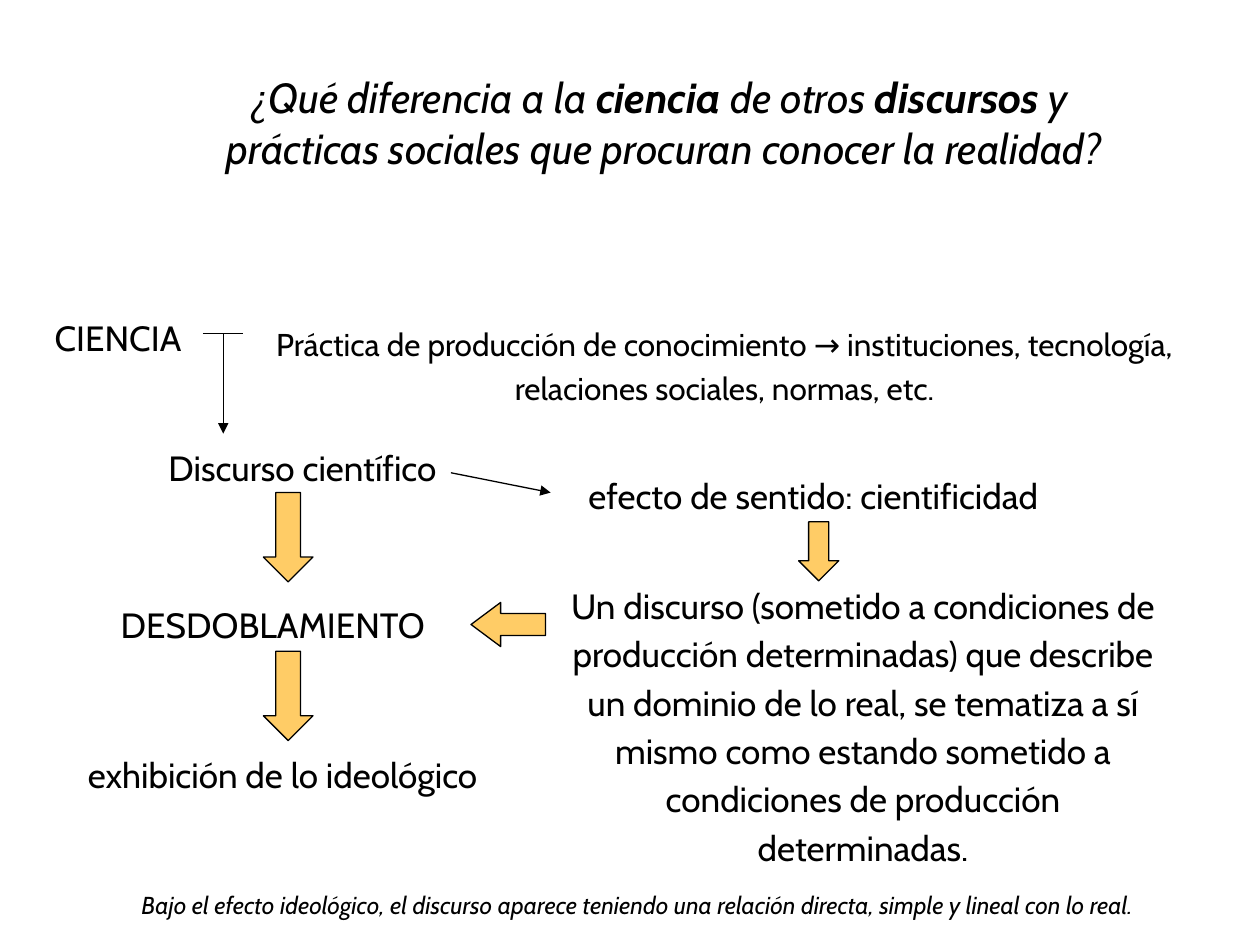
from dataclasses import dataclass

from lxml import etree
from pptx import Presentation
from pptx import util as u
from pptx.dml import color
from pptx.enum import shapes, text
from pptx.oxml import ns

FONT = "Cabin"
INK = "000000"
GOLD = "FFCC66"
LINE_WIDTH = 0.75


@dataclass(frozen=True)
class Phrase:
    wording: str
    bold: bool = False


@dataclass(frozen=True)
class Statement:
    lines: list[list[Phrase]]
    left: float
    top: float
    width: float
    height: float
    size: int = 20
    italic: bool = False
    spacing: float = 1.15


@dataclass(frozen=True)
class Link:
    start: tuple[float, float]
    end: tuple[float, float]
    arrow: bool = True


@dataclass(frozen=True)
class BlockArrow:
    left: float
    top: float
    width: float
    height: float
    head: float = 0.5
    rotation: int = 0


def plain(wording: str) -> list[list[Phrase]]:
    return [[Phrase(wording)]]


QUESTION = [
    [
        Phrase("¿Qué diferencia a la "),
        Phrase("ciencia", bold=True),
        Phrase(" de otros "),
        Phrase("discursos", bold=True),
        Phrase(" y "),
    ],
    [Phrase("prácticas sociales que procuran conocer la realidad?")],
]
SPLITTING = (
    "Un discurso (sometido a condiciones de producción determinadas) que describe "
    "un dominio de lo real, se tematiza a sí mismo como estando sometido a "
    "condiciones de producción determinadas."
)
PRACTICE = (
    "Práctica de producción de conocimiento → instituciones, tecnología, "
    "relaciones sociales, normas, etc."
)
IDEOLOGY = (
    "Bajo el efecto ideológico, el discurso aparece teniendo una relación directa, "
    "simple y lineal con lo real."
)

STATEMENTS = [
    Statement(QUESTION, 3.3, 1.32, 20.19, 3.86, size=24, italic=True, spacing=1.0),
    Statement(plain("CIENCIA"), -0.3, 6.12, 5.36, 1.24),
    Statement(plain(SPLITTING), 11.1, 11.53, 12.6, 6.15),
    Statement(plain("Discurso científico"), -2.9, 8.74, 18, 1.14),
    Statement(plain(PRACTICE), 4.7, 6.32, 19.81, 2.03, size=18),
    Statement(plain("efecto de sentido: cientificidad"), 7.4, 9.32, 18, 1.24),
    Statement(plain("DESDOBLAMIENTO"), -3.5, 11.91, 18, 1.24),
    Statement(plain(IDEOLOGY), 0.3, 17.73, 25.1, 0.94, size=14, italic=True),
    Statement(plain("exhibición de lo ideológico"), -3.3, 14.94, 18, 1.24),
]
LINKS = [
    Link((4.09, 6.73), (4.9, 6.73), arrow=False),
    Link((4.5, 6.73), (4.5, 8.74)),
    Link((9.09, 9.53), (11.1, 9.93)),
]
BLOCK_ARROWS = [
    BlockArrow(16.1, 10.52, 0.81, 1.19),
    BlockArrow(5.31, 9.93, 1, 1.8),
    BlockArrow(9.8, 11.84, 0.89, 1.5, head=0.67, rotation=90),
    BlockArrow(5.31, 13.13, 1, 1.8),
]


def rgb(code: str) -> color.RGBColor:
    return color.RGBColor.from_string(code)


def draw_statement(slide, statement: Statement) -> None:
    box = slide.shapes.add_textbox(
        u.Cm(statement.left), u.Cm(statement.top),
        u.Cm(statement.width), u.Cm(statement.height),
    )
    frame = box.text_frame
    frame.word_wrap = True
    frame.auto_size = text.MSO_AUTO_SIZE.SHAPE_TO_FIT_TEXT
    paragraph = frame.paragraphs[0]
    paragraph.alignment = text.PP_ALIGN.CENTER
    paragraph.line_spacing = statement.spacing
    for index, line in enumerate(statement.lines):
        if index:
            paragraph.add_line_break()
        for phrase in line:
            run = paragraph.add_run()
            run.text = phrase.wording
            run.font.name = FONT
            run.font.size = u.Pt(statement.size)
            run.font.bold = phrase.bold
            run.font.italic = statement.italic
            run.font.color.rgb = rgb(INK)


def draw_link(slide, link: Link) -> None:
    connector = slide.shapes.add_connector(
        shapes.MSO_CONNECTOR.STRAIGHT, *map(u.Cm, link.start + link.end)
    )
    connector.line.color.rgb = rgb(INK)
    connector.line.width = u.Pt(LINE_WIDTH)
    if link.arrow:
        outline = connector.line._get_or_add_ln()
        etree.SubElement(outline, ns.qn("a:tailEnd"), type="triangle")
    etree.SubElement(connector._element.spPr, ns.qn("a:effectLst"))


def draw_block_arrow(slide, arrow: BlockArrow) -> None:
    block = slide.shapes.add_shape(
        shapes.MSO_SHAPE.DOWN_ARROW,
        u.Cm(arrow.left), u.Cm(arrow.top), u.Cm(arrow.width), u.Cm(arrow.height),
    )
    block.adjustments[0] = 0.5
    block.adjustments[1] = arrow.head
    block.rotation = arrow.rotation
    block.shadow.inherit = False
    block.fill.solid()
    block.fill.fore_color.rgb = rgb(GOLD)
    block.line.color.rgb = rgb(INK)
    block.line.width = u.Pt(LINE_WIDTH)


def main() -> None:
    deck = Presentation()
    deck.slide_width = u.Cm(25.4)
    deck.slide_height = u.Cm(19.05)
    slide = deck.slides.add_slide(deck.slide_layouts[6])
    for statement in STATEMENTS:
        draw_statement(slide, statement)
    for link in LINKS:
        draw_link(slide, link)
    for arrow in BLOCK_ARROWS:
        draw_block_arrow(slide, arrow)
    deck.save("out.pptx")


if __name__ == "__main__":
    main()
